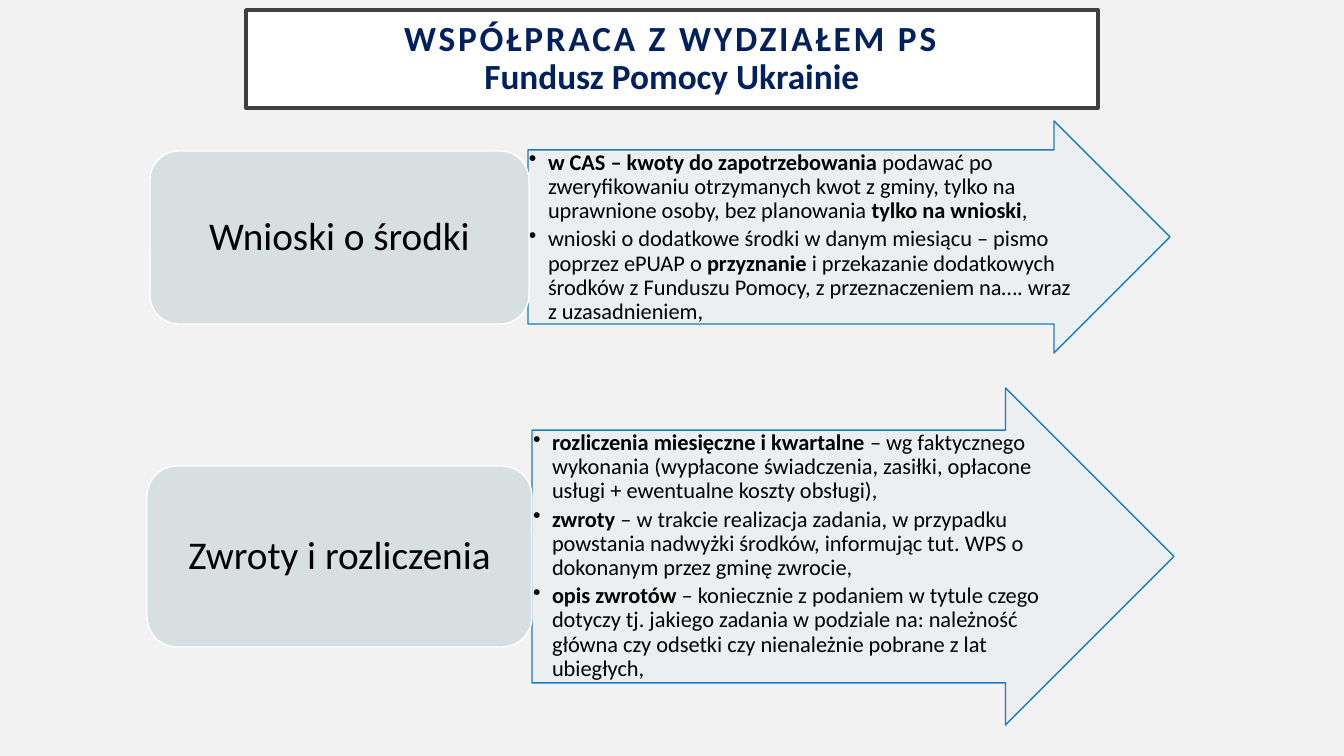
import copy
from dataclasses import dataclass

import pptx
import pptx.dml.color
import pptx.enum.shapes
import pptx.enum.text
import pptx.oxml
import pptx.oxml.ns
import pptx.util

SLIDE_SIZE = (1344, 756)
TITLE_BOX = (246, 10, 852, 98)
TITLE_LINES = ["WSPÓŁPRACA Z WYDZIAŁEM PS", "Fundusz Pomocy Ukrainie"]

# Each point is a list of (wording, bold) pieces.
TOPICS = [
    {
        "label": "Wnioski o środki",
        "label_box": (150, 151, 379, 173),
        "arrow_box": (528, 121, 642, 232),
        "points": [
            [("w CAS – kwoty do zapotrzebowania ", True),
             ("podawać po zweryfikowaniu otrzymanych kwot z gminy, tylko na "
              "uprawnione osoby, bez planowania ", False),
             ("tylko na wnioski", True), (",", False)],
            [("wnioski o dodatkowe środki w danym miesiącu – pismo poprzez ePUAP o ", False),
             ("przyznanie", True),
             (" i przekazanie dodatkowych środków z Funduszu Pomocy, "
              "z przeznaczeniem na…. wraz z uzasadnieniem,", False)],
        ],
    },
    {
        "label": "Zwroty i rozliczenia",
        "label_box": (147, 466, 385, 181),
        "arrow_box": (532, 388, 642, 337),
        "points": [
            [("rozliczenia miesięczne i kwartalne ", True),
             ("– wg faktycznego wykonania (wypłacone świadczenia, zasiłki, "
              "opłacone usługi + ewentualne koszty obsługi),", False)],
            [("zwroty", True),
             (" – w trakcie realizacja zadania, w przypadku powstania nadwyżki "
              "środków, informując tut. WPS o dokonanym przez gminę zwrocie,", False)],
            [("opis zwrotów ", True),
             ("– koniecznie z podaniem w tytule czego dotyczy tj. jakiego zadania "
              "w podziale na: należność główna czy odsetki czy nienależnie pobrane "
              "z lat ubiegłych,", False)],
        ],
    },
]


@dataclass(frozen=True)
class Theme:
    font: str = "Calibri"
    background: str = "F2F2F2"
    title_fill: str = "FFFFFF"
    title_line: str = "404040"
    title_text: str = "002060"
    label_fill: str = "D7DFE1"
    label_line: str = "FFFFFF"
    arrow_fill: str = "EBEFF0"
    arrow_line: str = "0070C0"
    text: str = "000000"
    title_size: float = 25.2
    label_size: float = 28
    point_size: float = 16


THEME = Theme()
SHAPES = pptx.enum.shapes.MSO_SHAPE
ANCHOR = pptx.enum.text.MSO_ANCHOR
CENTER = pptx.enum.text.PP_ALIGN.CENTER


def px(length):
    return pptx.util.Emu(round(length * 914400 / 100.8))


def rgb(value):
    return pptx.dml.color.RGBColor.from_string(value)


def paint(shape, fill, line, line_width):
    shape.fill.solid()
    shape.fill.fore_color.rgb = rgb(fill)
    shape.line.color.rgb = rgb(line)
    shape.line.width = pptx.util.Pt(line_width)
    shape.shadow.inherit = False


def make_translucent(shape, percent):
    """Set the opacity of both the fill and the outline."""
    for color in shape._element.spPr.iter(pptx.oxml.ns.qn("a:srgbClr")):
        color.append(pptx.oxml.parse_xml(
            f'<a:alpha {pptx.oxml.ns.nsdecls("a")} val="{percent * 1000}"/>'))


def set_frame(shape, anchor, inset_x, inset_y):
    frame = shape.text_frame
    frame.word_wrap = True
    frame.auto_size = pptx.enum.text.MSO_AUTO_SIZE.NONE
    frame.vertical_anchor = anchor
    frame.margin_left = frame.margin_right = px(inset_x)
    frame.margin_top = frame.margin_bottom = px(inset_y)
    return frame


def style_run(run, size, color, bold=False):
    run.font.name = THEME.font
    run.font.size = pptx.util.Pt(size)
    run.font.bold = bold
    run.font.color.rgb = rgb(color)


def add_title(slide):
    title = slide.shapes.title
    title.left, title.top, title.width, title.height = map(px, TITLE_BOX)
    paint(title, THEME.title_fill, THEME.title_line, 2.5)
    frame = set_frame(title, ANCHOR.MIDDLE, 20, 20)
    paragraph = frame.paragraphs[0]
    paragraph.text = "\v".join(TITLE_LINES)
    paragraph.alignment = CENTER
    paragraph.line_spacing = 0.9
    for run, tracking in zip(paragraph.runs, (200, 0)):
        style_run(run, THEME.title_size, THEME.title_text, True)
        run._r.get_or_add_rPr().set("spc", str(tracking))
    # The line break needs the title size too, or it stretches the line.
    line_break = paragraph._p.find(pptx.oxml.ns.qn("a:br"))
    line_break.insert(0, copy.deepcopy(paragraph.runs[0]._r.rPr))


def add_point(paragraph, pieces):
    paragraph.level = 1
    paragraph.alignment = pptx.enum.text.PP_ALIGN.LEFT
    paragraph.line_spacing = 0.9
    paragraph.space_after = pptx.util.Pt(3)
    properties = paragraph._p.get_or_add_pPr()
    properties.set("marL", str(px(19)))
    properties.set("indent", str(-px(19)))
    properties.append(pptx.oxml.parse_xml(
        f'<a:buChar {pptx.oxml.ns.nsdecls("a")} char="•"/>'))
    for wording, bold in pieces:
        run = paragraph.add_run()
        run.text = wording
        style_run(run, THEME.point_size, THEME.text, bold)


def add_arrow(slide, box, points):
    arrow = slide.shapes.add_shape(SHAPES.RIGHT_ARROW, *map(px, box))
    arrow.adjustments[0] = 0.75
    arrow.adjustments[1] = 0.5
    paint(arrow, THEME.arrow_fill, THEME.arrow_line, 1)
    make_translucent(arrow, 90)
    frame = set_frame(arrow, ANCHOR.TOP, 1, 1)
    for index, pieces in enumerate(points):
        add_point(frame.add_paragraph() if index else frame.paragraphs[0], pieces)


def add_label(slide, box, wording):
    label = slide.shapes.add_shape(SHAPES.ROUNDED_RECTANGLE, *map(px, box))
    paint(label, THEME.label_fill, THEME.label_line, 1)
    paragraph = set_frame(label, ANCHOR.MIDDLE, 12, 6).paragraphs[0]
    paragraph.text = wording
    paragraph.alignment = CENTER
    paragraph.line_spacing = 0.9
    style_run(paragraph.runs[0], THEME.label_size, THEME.text)


def main():
    deck = pptx.Presentation()
    deck.slide_width, deck.slide_height = map(px, SLIDE_SIZE)
    slide = deck.slides.add_slide(deck.slide_layouts.get_by_name("Title Only"))
    slide.background.fill.solid()
    slide.background.fill.fore_color.rgb = rgb(THEME.background)
    add_title(slide)
    for topic in TOPICS:
        add_arrow(slide, topic["arrow_box"], topic["points"])
        add_label(slide, topic["label_box"], topic["label"])
    deck.save("out.pptx")


if __name__ == "__main__":
    main()
